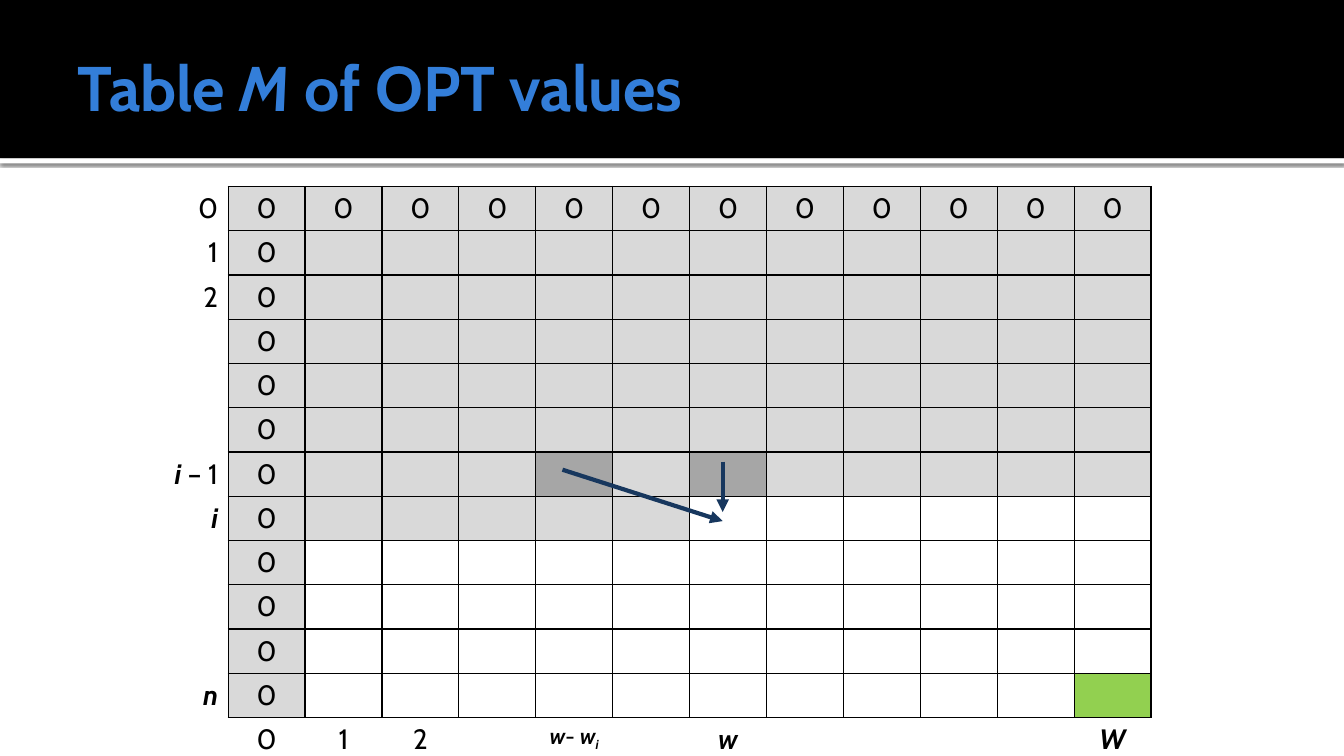
import pptx
import pptx.dml.color
import pptx.enum.shapes
import pptx.enum.text
import pptx.oxml
import pptx.oxml.ns
import pptx.util
import lxml.etree

SCALE = 9144  # EMU per px, 100 px to the inch
ALIGN = pptx.enum.text.PP_ALIGN
ANCHOR = pptx.enum.text.MSO_ANCHOR
SHAPE = pptx.enum.shapes.MSO_SHAPE
NO_GRID_STYLE = "{2D5ABB26-0587-4C30-8999-92F81FD0307C}"


def px(length):
    return pptx.util.Emu(round(length * SCALE))


def colour(code):
    return pptx.dml.color.RGBColor.from_string(code)


def add_element(parent, tag, **attributes):
    child = lxml.etree.SubElement(parent, pptx.oxml.ns.qn(tag))
    for name, value in attributes.items():
        child.set(name, str(value))
    return child


class SlideBuilder:
    font = "Cabin"
    black, white, blue, navy = "000000", "FFFFFF", "337ED9", "17375E"
    filled, source, goal = "D9D9D9", "A6A6A6", "92D050"

    def __init__(self, deck):
        self.page = deck.slides.add_slide(deck.slide_layouts[5])

    def add_spans(self, para, spans, align, **base):
        para.alignment = align
        for text, changes in spans:
            style = {"name": self.font, "size": 20, "color": self.black, **base, **changes}
            span = para.add_run()
            span.text = text
            span.font.color.rgb = colour(style.pop("color"))
            style["size"] = pptx.util.Pt(style["size"])
            baseline = style.pop("baseline", 0)
            for name, value in style.items():
                setattr(span.font, name, value)
            if baseline:
                span.font._element.set("baseline", str(baseline))

    def title(self, spans, left, top, width, height):
        box = self.page.shapes.title
        placing = {"left": left, "top": top, "width": width, "height": height}
        for name, value in placing.items():
            setattr(box, name, px(value))
        frame = box.text_frame
        layout = {"margin_left": px(10), "margin_right": px(5), "margin_top": px(5),
                  "margin_bottom": px(5), "vertical_anchor": ANCHOR.MIDDLE,
                  "word_wrap": True, "auto_size": pptx.enum.text.MSO_AUTO_SIZE.NONE}
        for name, value in layout.items():
            setattr(frame, name, value)
        self.add_spans(frame.paragraphs[0], spans, ALIGN.LEFT,
                       size=45, color=self.blue, bold=True)

    def band(self, top, height, fill, shadow=False):
        box = self.page.shapes.add_shape(SHAPE.RECTANGLE, 0, px(top), px(1333.33), px(height))
        box.shadow.inherit = False
        box.fill.solid()
        box.fill.fore_color.rgb = colour(fill)
        box.line.fill.background()
        if shadow:
            effects = box._element.spPr.find(pptx.oxml.ns.qn("a:effectLst"))
            outer = add_element(effects, "a:outerShdw", blurRad=pptx.util.Pt(2.5),
                                dist=pptx.util.Pt(0.8), dir=90 * 60000, algn="ctr", rotWithShape=0)
            tint = add_element(outer, "a:srgbClr", val=self.black)
            add_element(tint, "a:alpha", val=60000)
        # Keep bands behind the title
        tree = self.page.shapes._spTree
        tree.remove(box._element)
        tree.insert(tree.index(self.page.shapes.title._element), box._element)

    def table(self, size, left, top, width, height):
        frame = self.page.shapes.add_table(size, size, px(left), px(top), px(width), px(height))
        table = frame.table
        table.first_row = table.horz_banding = False
        table._tbl.tblPr.find(pptx.oxml.ns.qn("a:tableStyleId")).text = NO_GRID_STYLE
        for column in table.columns:
            column.width = px(width / size)
        for row in table.rows:
            row.height = px(height / size)
        return table

    def cell(self, cell, spans, align, sides, fill):
        properties = cell._tc.get_or_add_tcPr()
        for side in sides:
            line = add_element(properties, f"a:ln{side}", w=pptx.util.Pt(1))
            add_element(add_element(line, "a:solidFill"), "a:srgbClr", val=self.black)
        if fill:
            cell.fill.solid()
            cell.fill.fore_color.rgb = colour(fill)
        else:
            cell.fill.background()
        self.add_spans(cell.text_frame.paragraphs[0], spans, align)

    def arrow(self, start, end):
        arrow = self.page.shapes.add_connector(
            pptx.enum.shapes.MSO_CONNECTOR.STRAIGHT, *map(px, start + end))
        arrow.line.color.rgb = colour(self.navy)
        arrow.line.width = pptx.util.Pt(3)
        add_element(arrow.line._get_or_add_ln(), "a:tailEnd", type="triangle")
        add_element(arrow._element.spPr, "a:effectLst")


VARIABLE = {"bold": True, "italic": True}
SMALL = {"size": 16}
SIZE = 13
LAST = SIZE - 1
ROW_I, COLUMN_W, COLUMN_W_LESS = 7, 7, 5

ROW_LABELS = {
    0: [("0", {})], 1: [("1", {})], 2: [("2", {})],
    ROW_I - 1: [("i", VARIABLE), (" – 1", {})],
    ROW_I: [("i", VARIABLE)],
    LAST - 1: [("n", VARIABLE)],
}
COLUMN_LABELS = {
    1: [("0", {})], 2: [("1", {})], 3: [("2", {})],
    COLUMN_W_LESS: [("w", {**VARIABLE, **SMALL}), ("- ", SMALL), ("w", {**VARIABLE, **SMALL}),
                    ("i", {**VARIABLE, **SMALL, "baseline": -25000})],
    COLUMN_W: [("w", VARIABLE)],
    LAST: [("W", VARIABLE)],
}


def value_fill(style, row, column):
    if row == ROW_I - 1 and column in (COLUMN_W_LESS, COLUMN_W):
        return style.source
    if (row, column) == (LAST - 1, LAST):
        return style.goal
    done = row < ROW_I or column == 1 or (row == ROW_I and column < COLUMN_W)
    return style.filled if done else None


def main():
    deck = pptx.Presentation()
    deck.slide_width, deck.slide_height = px(1333.33), px(750)
    slide = SlideBuilder(deck)

    # Header
    slide.band(157, 5, slide.white, shadow=True)
    slide.band(0, 157, slide.black)
    slide.title([("Table ", {}), ("M", {"italic": True}), (" of OPT values", {})],
                67, 17, 1200, 137)

    # Table with row labels on the left and column labels below
    table = slide.table(SIZE, 150, 185, 992, 563)
    for row in range(SIZE):
        for column in range(SIZE):
            cell = table.cell(row, column)
            if row == LAST:
                sides = "T" if column else ""
                slide.cell(cell, COLUMN_LABELS.get(column, []), ALIGN.CENTER, sides, None)
            elif column == 0:
                slide.cell(cell, ROW_LABELS.get(row, []), ALIGN.RIGHT, "R", None)
            else:
                zero = [("0", {})] if row == 0 or column == 1 else []
                slide.cell(cell, zero, ALIGN.CENTER, "LRTB", value_fill(slide, row, column))

    # Arrows into the current entry
    slide.arrow((717, 458), (717, 508))
    slide.arrow((558, 466), (717, 517))

    deck.save("out.pptx")


if __name__ == "__main__":
    main()
